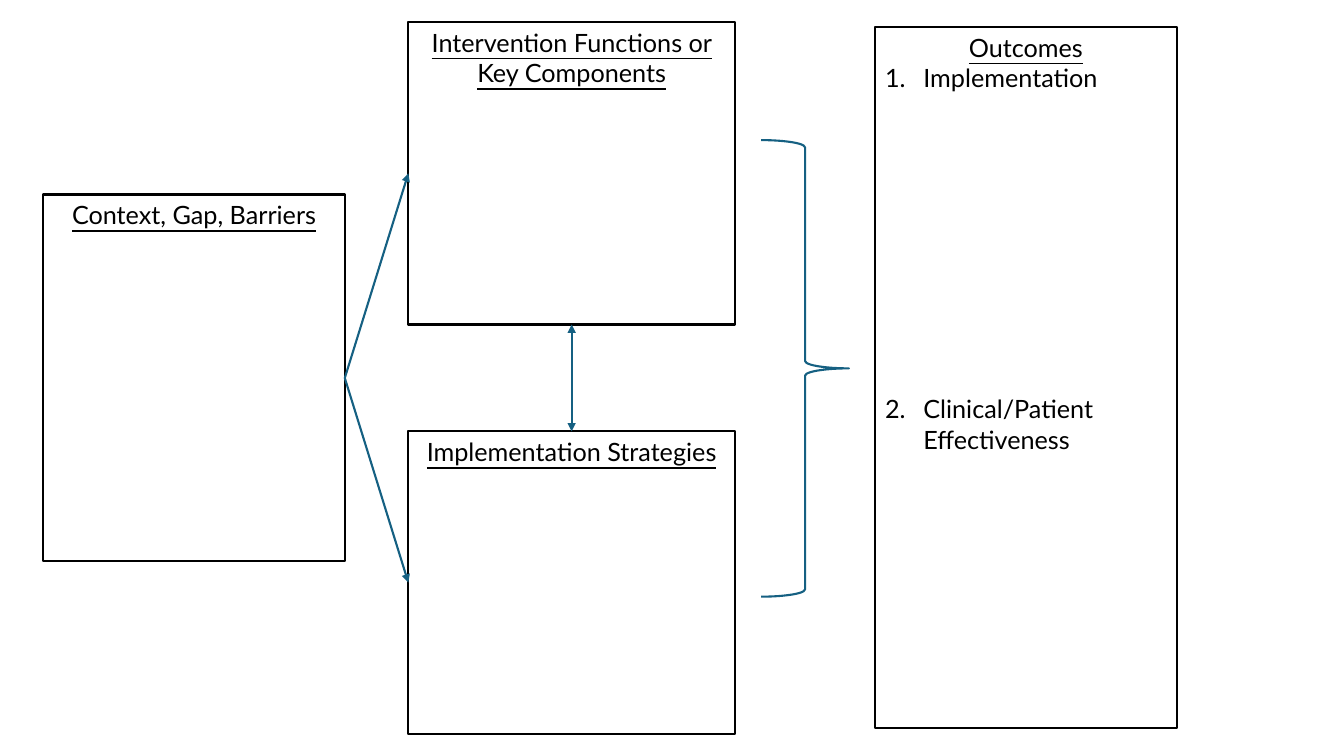
from lxml import etree
from pptx import Presentation
from pptx import util as u
from pptx.dml.color import RGBColor
from pptx.enum import shapes, text
from pptx.oxml.ns import qn

COLORS = {"paper": "FFFFFF", "ink": "000000", "link": "156082"}
FONT_SIZE = u.Pt(18)
LINE_WIDTH = u.Pt(1.5)
INDENT = u.Inches(0.38)


def style_line(line, color):
    line.color.rgb = RGBColor.from_string(COLORS[color])
    line.width = LINE_WIDTH


def add_text(paragraph, wording, underline=False):
    run = paragraph.add_run()
    run.text = wording
    run.font.name = "Lato"
    run.font.size = FONT_SIZE
    run.font.underline = underline
    run.font.color.rgb = RGBColor.from_string(COLORS["ink"])


prs = Presentation()
prs.slide_width = u.Inches(13.33)
prs.slide_height = u.Inches(7.5)
slide = prs.slides.add_slide(prs.slide_layouts[6])

# Boxes with underlined headings
sections = [
    ("Context, Gap, Barriers", 0.43, 1.93, 2.99, 3.64),
    ("Intervention Functions or Key Components", 4.05, 0.22, 3.24, 3),
    ("Implementation Strategies", 4.05, 4.28, 3.24, 3),
    ("Outcomes", 8.68, 0.27, 2.99, 6.95),
]
boxes = []
for heading, *place in sections:
    box = slide.shapes.add_shape(shapes.MSO_SHAPE.RECTANGLE, *map(u.Inches, place))
    box.shadow.inherit = False
    box.fill.solid()
    box.fill.fore_color.rgb = RGBColor.from_string(COLORS["paper"])
    style_line(box.line, "ink")
    box.text_frame.word_wrap = True
    box.text_frame.vertical_anchor = text.MSO_ANCHOR.TOP
    title = box.text_frame.paragraphs[0]
    title.alignment = text.PP_ALIGN.CENTER
    add_text(title, heading, underline=True)
    boxes.append(box)
context, functions, strategies, outcomes = boxes

# Numbered outcomes, the second one halfway down the box
for outcome, gap in [("Implementation", 0), ("Clinical/Patient Effectiveness", 215)]:
    item = outcomes.text_frame.add_paragraph()
    item.alignment = text.PP_ALIGN.LEFT
    item.space_before = u.Pt(gap)
    props = item._p.get_or_add_pPr()
    props.set("marL", str(INDENT))
    props.set("indent", str(-INDENT))
    etree.SubElement(props, qn("a:buFont"), typeface="+mj-lt")
    etree.SubElement(props, qn("a:buAutoNum"), type="arabicPeriod")
    add_text(item, outcome)

# Arrows between the boxes: start, side, end, side, arrowheads
arrows = [
    (context, 3, functions, 1, ["tailEnd"]),
    (context, 3, strategies, 1, ["tailEnd"]),
    (functions, 2, strategies, 0, ["headEnd", "tailEnd"]),
]
for start, start_side, end, end_side, heads in arrows:
    arrow = slide.shapes.add_connector(shapes.MSO_CONNECTOR.STRAIGHT, 0, 0, 0, 0)
    arrow.begin_connect(start, start_side)
    arrow.end_connect(end, end_side)
    style_line(arrow.line, "link")
    for head in heads:
        etree.SubElement(arrow.line._get_or_add_ln(), qn(f"a:{head}"), type="triangle")
    etree.SubElement(arrow._element.spPr, qn("a:effectLst"))

# Brace leading to the outcomes
brace = slide.shapes.add_shape(
    shapes.MSO_SHAPE.RIGHT_BRACE,
    u.Inches(7.55), u.Inches(1.39), u.Inches(0.87), u.Inches(4.53),
)
brace.shadow.inherit = False
brace.fill.background()
style_line(brace.line, "link")

prs.save("out.pptx")
